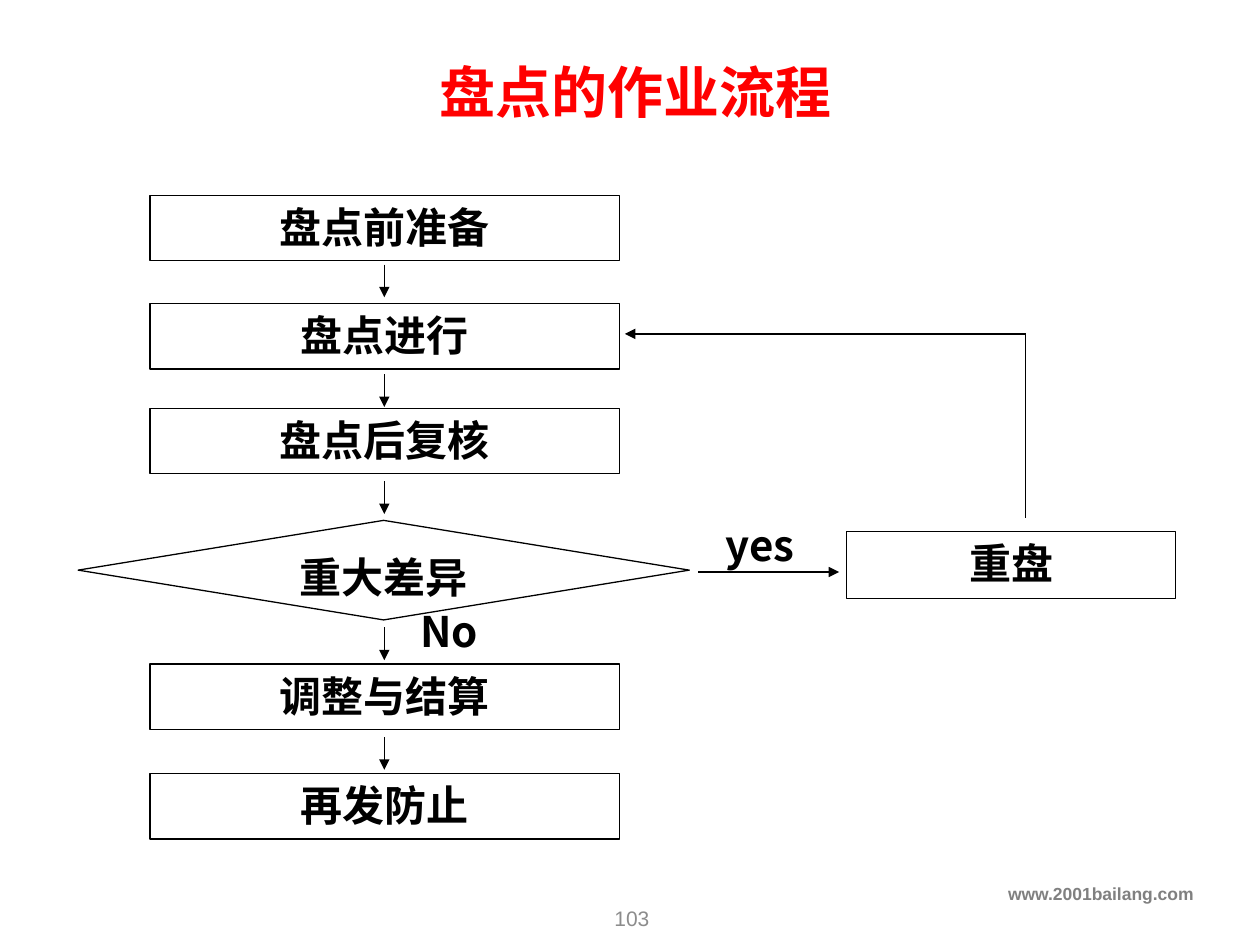
from lxml.etree import SubElement
from pptx import Presentation
from pptx.dml.color import RGBColor
from pptx.enum.shapes import MSO_CONNECTOR, MSO_SHAPE
from pptx.enum.text import MSO_ANCHOR as ANCHOR, PP_ALIGN as ALIGN
from pptx.oxml.ns import qn
from pptx.util import Inches, Pt


class Theme:
    cjk, latin = "Noto Sans CJK SC", "Arial"
    black, white, red = "000000", "FFFFFF", "FF0000"
    site, number = "808080", "8C8C8C"
    title_size, step_size, number_size, site_size = 32, 24, 12, 10
    line = 0.75


# Content: steps as (text, top)
STEPS = [("盘点前准备", 1.55), ("盘点进行", 2.41), ("盘点后复核", 3.24),
         ("调整与结算", 5.27), ("再发防止", 6.14)]
STEP_LEFT, STEP_W, STEP_H = 1.19, 3.73, 0.52
LABELS = [("No", (3.1, 4.76, 0.93, 0.41)), ("yes", (5.51, 4.07, 1.04, 0.39))]
DECISION = ("重大差异", (0.62, 4.13, 4.85, 0.79))
RECOUNT = ("重盘", (6.72, 4.22, 2.61, 0.53))
ARROW_TOPS, ARROW_LEN = [2.1, 2.97, 3.82, 4.98, 5.85], 0.26
AXIS_X, LOOP_X, LOOP_Y, YES_Y = 3.05, 8.14, 2.65, 4.54

prs = Presentation()
prs.slide_width, prs.slide_height = Inches(10), Inches(7.5)
s = prs.slides.add_slide(prs.slide_layouts[6])


def rgb(value):
    return RGBColor.from_string(value)


def write(sp, text, size=Theme.step_size, font=Theme.cjk, color=Theme.black,
          bold=True, align=ALIGN.CENTER, anchor=ANCHOR.TOP, wrap=True):
    tf = sp.text_frame
    tf.word_wrap, tf.vertical_anchor = wrap, anchor
    p = tf.paragraphs[0]
    p.alignment = align
    r = p.add_run()
    r.text = text
    r.font.size, r.font.bold, r.font.name = Pt(size), bold, font
    r.font.color.rgb = rgb(color)
    SubElement(r.font._element, qn("a:ea"), typeface=font)


def add_text(text, box, **fmt):
    write(s.shapes.add_textbox(*map(Inches, box)), text, **fmt)


def add_node(text, box, kind=MSO_SHAPE.RECTANGLE, line=Theme.black):
    sp = s.shapes.add_shape(kind, *map(Inches, box))
    sp.shadow.inherit = False
    sp.fill.solid()
    sp.fill.fore_color.rgb = rgb(Theme.white)
    sp.line.color.rgb = rgb(line)
    sp.line.width = Pt(Theme.line)
    write(sp, text)


def add_line(x1, y1, x2, y2, arrow=True):
    c = s.shapes.add_connector(MSO_CONNECTOR.STRAIGHT, *map(Inches, (x1, y1, x2, y2)))
    c.line.color.rgb = rgb(Theme.black)
    c.line.width = Pt(Theme.line)
    if arrow:
        SubElement(c.line._get_or_add_ln(), qn("a:tailEnd"), type="triangle")
    SubElement(c._element.spPr, qn("a:effectLst"))


# Branch labels, behind the flow
for text, box in LABELS:
    add_node(text, box, line=Theme.white)

# Steps and decision
for text, top in STEPS:
    add_node(text, (STEP_LEFT, top, STEP_W, STEP_H))
add_node(*DECISION, kind=MSO_SHAPE.DIAMOND)
add_node(*RECOUNT)

# Downward arrows, yes branch and loop back
for top in ARROW_TOPS:
    add_line(AXIS_X, top, AXIS_X, top + ARROW_LEN)
add_line(5.54, YES_Y, 6.66, YES_Y)
add_line(LOOP_X, 4.11, LOOP_X, LOOP_Y, arrow=False)
add_line(LOOP_X, LOOP_Y, 4.96, LOOP_Y)

# Title and footer
add_text("盘点的作业流程", (3.39, 0.41, 3.34, 0.64), size=Theme.title_size,
         color=Theme.red, align=ALIGN.LEFT, wrap=False)
add_text("www.2001bailang.com", (0, 6.96, 9.57, 0.35), size=Theme.site_size,
         font=Theme.latin, color=Theme.site, align=ALIGN.RIGHT)
add_text("103", (3.89, 7.09, 2.25, 0.4), size=Theme.number_size, font=Theme.latin,
         color=Theme.number, bold=False, anchor=ANCHOR.MIDDLE)

prs.save("out.pptx")
